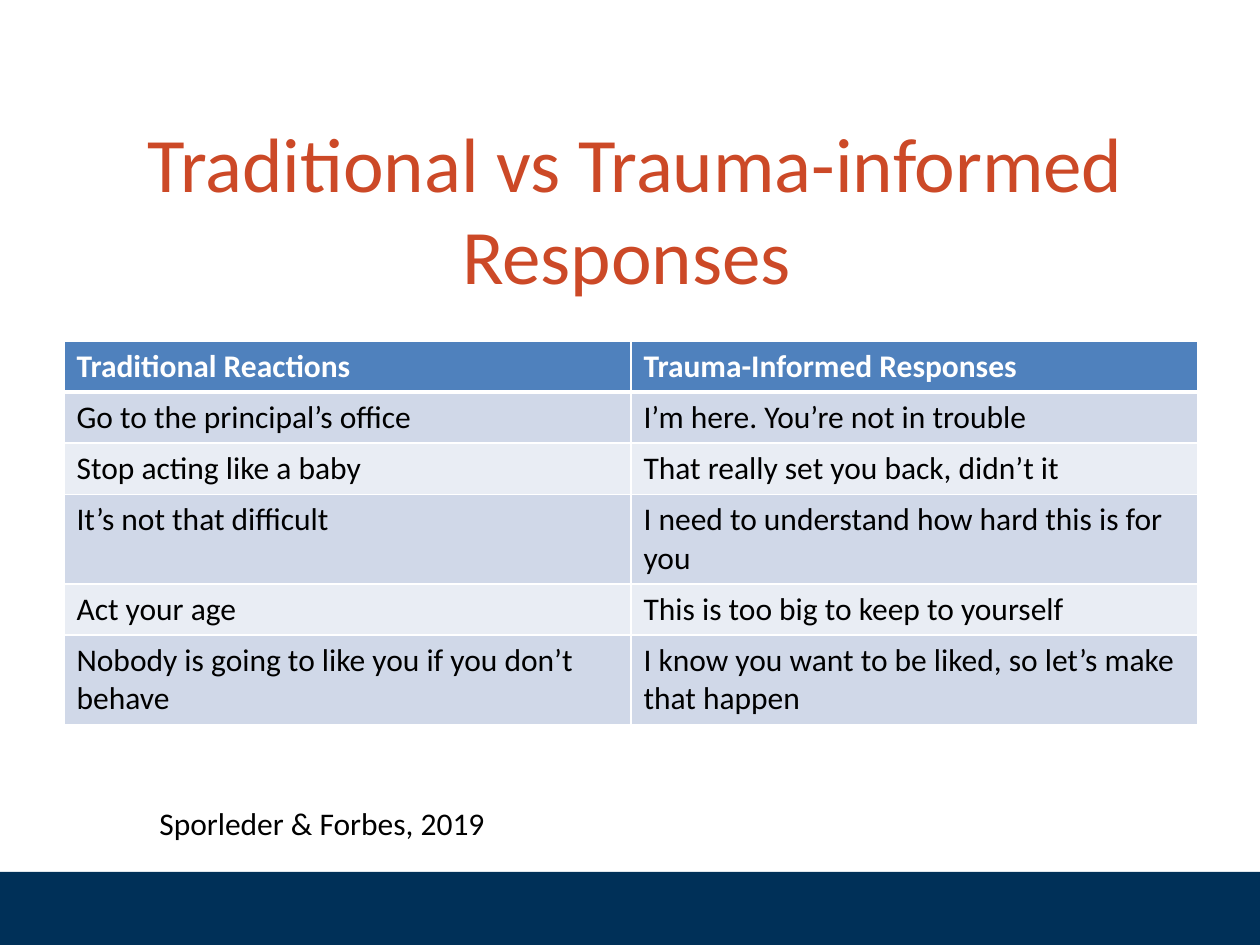
from pptx import Presentation
from pptx.util import Emu, Pt
from pptx.dml.color import RGBColor
from pptx.enum.shapes import MSO_SHAPE as SHAPE
from pptx.enum.text import MSO_ANCHOR as ANCHOR, MSO_AUTO_SIZE as FIT, PP_ALIGN as ALIGN
from pptx.oxml import parse_xml
from pptx.oxml.ns import nsdecls

THEME = {
    "font": "Calibri", "title_size": 44, "body_size": 18,
    "title": "CC4927", "text": "000000", "band": "003058", "white": "FFFFFF",
    "header": "4F81BD", "stripes": ["D0D8E8", "E9EDF4"],
}
ROWS = [
    ("Traditional Reactions", "Trauma-Informed Responses"),
    ("Go to the principal’s office", "I’m here. You’re not in trouble"),
    ("Stop acting like a baby", "That really set you back, didn’t it"),
    ("It’s not that difficult", "I need to understand how hard this is for you"),
    ("Act your age", "This is too big to keep to yourself"),
    ("Nobody is going to like you if you don’t behave",
     "I know you want to be liked, so let’s make that happen"),
]


def px(*values):
    return [Emu(round(v * 914400 / 126)) for v in values]


def write(tf, text, size, color, bold=False):
    tf.text = text
    font = tf.paragraphs[0].runs[0].font
    font.name, font.size, font.bold = THEME["font"], Pt(size), bold
    font.color.rgb = RGBColor.from_string(color)


prs = Presentation()
prs.slide_width, prs.slide_height = px(1260, 945)
s = prs.slides.add_slide(prs.slide_layouts[6])

# Footer band
band = s.shapes.add_shape(SHAPE.RECTANGLE, *px(0, 872, 1260, 84))
band.shadow.inherit = False
band.fill.solid()
band.fill.fore_color.rgb = RGBColor.from_string(THEME["band"])
band.line.fill.background()

# Comparison table
table = s.shapes.add_table(len(ROWS), 2, *px(64, 341, 1134, 51 * len(ROWS))).table
for r, row in enumerate(ROWS):
    header = r == 0
    fill = THEME["header"] if header else THEME["stripes"][(r - 1) % 2]
    for c, text in enumerate(row):
        cell = table.cell(r, c)
        write(cell.text_frame, text, THEME["body_size"],
              THEME["white"] if header else THEME["text"], bold=header)
        cell.fill.solid()
        cell.fill.fore_color.rgb = RGBColor.from_string(fill)
        # Cell borders come before the fill, heavier around the header rule
        for i, side in enumerate(("lnL", "lnR", "lnT", "lnB")):
            heavy = (side == "lnB" and header) or (side == "lnT" and r == 1)
            cell._tc.get_or_add_tcPr().insert(i, parse_xml(
                f'<a:{side} {nsdecls("a")} w="{Pt(3 if heavy else 1)}"><a:solidFill>'
                f'<a:srgbClr val="{THEME["white"]}"/></a:solidFill></a:{side}>'))

# Title
tf = s.shapes.add_textbox(*px(69, 147, 1133, 122)).text_frame
tf.word_wrap = True
tf.vertical_anchor = ANCHOR.MIDDLE
write(tf, "Traditional vs Trauma-informed Responses ", THEME["title_size"], THEME["title"])
tf.paragraphs[0].alignment = ALIGN.CENTER

# Citation
tf = s.shapes.add_textbox(*px(147, 798, 354, 50)).text_frame
tf.word_wrap = False
tf.auto_size = FIT.SHAPE_TO_FIT_TEXT
write(tf, "Sporleder & Forbes, 2019", THEME["body_size"], THEME["text"])

prs.save("out.pptx")
